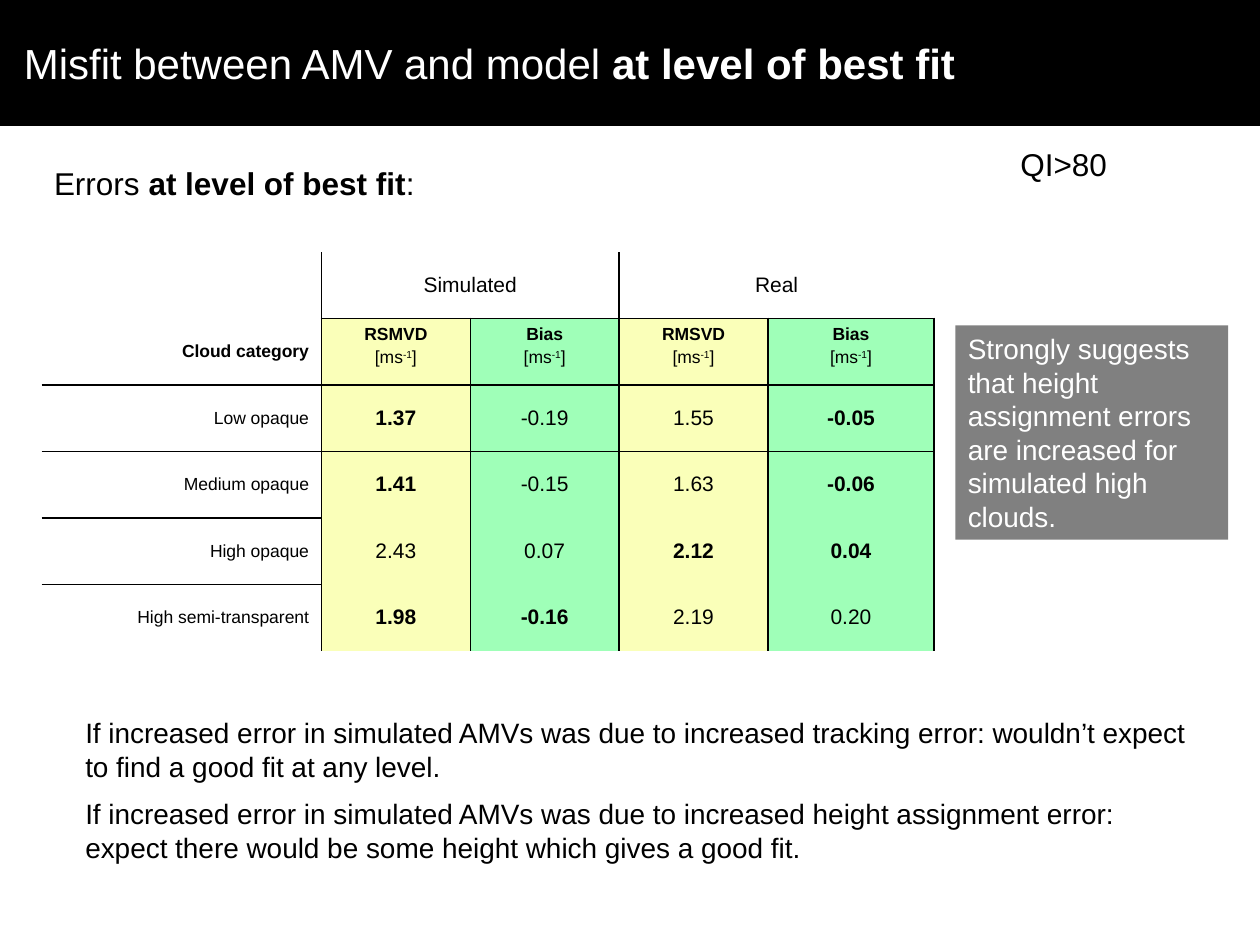
from lxml.etree import SubElement as Sub
from pptx import Presentation
from pptx.dml.color import RGBColor as Rgb
from pptx.enum.shapes import MSO_SHAPE as Shape
from pptx.enum.text import MSO_ANCHOR as Anchor, MSO_AUTO_SIZE as Fit, PP_ALIGN as Align
from pptx.oxml.ns import qn
from pptx.util import Cm, Pt

BLACK, WHITE, GREY = "000000", "FFFFFF", "808080"
YELLOW, GREEN = "FAFFB9", "9FFFB8"
PLAIN = "{2D5ABB26-0587-4C30-8999-92F81FD0307C}"


def paint(item, color):
    item.fill.solid()
    item.fill.fore_color.rgb = Rgb.from_string(color)


class Deck:
    font = "Arial"

    def __init__(self, wide, high):
        self.show = Presentation()
        self.show.slide_width, self.show.slide_height = Cm(wide), Cm(high)
        self.slide = self.show.slides.add_slide(self.show.slide_layouts[5])

    def put(self, frame, paras, size, color=BLACK, align=Align.LEFT, gap=0):
        frame.word_wrap = True
        for i, runs in enumerate(paras):
            para = frame.add_paragraph() if i else frame.paragraphs[0]
            para.alignment = align
            para.space_before = Pt(gap if i else 0)
            for text, *marks in runs:
                run = para.add_run()
                run.text = text
                run.font.name, run.font.size = self.font, Pt(size)
                run.font.bold = "bold" in marks
                run.font.color.rgb = Rgb.from_string(color)
                if "super" in marks:
                    run.font._element.set("baseline", "30000")

    def title(self, box, runs, size):
        head = self.slide.shapes.title
        head.left, head.top, head.width, head.height = map(Cm, box)
        paint(head, BLACK)
        frame = head.text_frame
        frame.auto_size = Fit.NONE
        frame.vertical_anchor = Anchor.MIDDLE
        frame.margin_left = Cm(0.48)
        self.put(frame, [runs], size, WHITE)

    def text(self, box, paras, size, gap=0):
        item = self.slide.shapes.add_textbox(*map(Cm, box))
        self.put(item.text_frame, paras, size, gap=gap)
        item.text_frame.auto_size = Fit.SHAPE_TO_FIT_TEXT

    def panel(self, box, paras, size, fill):
        item = self.slide.shapes.add_shape(Shape.RECTANGLE, *map(Cm, box))
        item.shadow.inherit = False
        paint(item, fill)
        item.line.fill.background()
        item.text_frame.vertical_anchor = Anchor.TOP
        self.put(item.text_frame, paras, size, WHITE)
        item.text_frame.auto_size = Fit.SHAPE_TO_FIT_TEXT

    def table(self, left, top, cols, rows, high):
        box = map(Cm, (left, top, sum(cols), high * rows))
        grid = self.slide.shapes.add_table(rows, len(cols), *box).table
        grid.first_row = grid.horz_banding = False
        grid._tbl.tblPr.find(qn("a:tableStyleId")).text = PLAIN
        for col, wide in zip(grid.columns, cols):
            col.width = Cm(wide)
        for row in grid.rows:
            row.height = Cm(high)
        return grid

    def edges(self, cell, sides):
        props = cell._tc.get_or_add_tcPr()
        for side in sides:
            line = Sub(props, qn(f"a:ln{side}"), w=str(Pt(1)))
            Sub(Sub(line, qn("a:solidFill")), qn("a:srgbClr"), val=BLACK)

    def cell(self, cell, paras, size, align, fill=None, anchor=Anchor.MIDDLE):
        if fill:
            paint(cell, fill)
        else:
            cell.fill.background()
        cell.vertical_anchor = anchor
        self.put(cell.text_frame, paras, size, align=align, gap=2)


def ruled(r, c):
    return r == 1 or (r == 0 and c > 0) or (c == 0 and 1 < r < 5)


def fill_table(deck):
    grid = deck.table(0.84, 5.08, (5.64, 3, 3, 3, 3.35), 6, 1.34)
    for r in range(6):
        for c in range(5):
            tests = {"L": c in (1, 3), "R": c in (0, 2, 4),
                     "T": ruled(r - 1, c), "B": ruled(r, c)}
            deck.edges(grid.cell(r, c), [k for k, on in tests.items() if on])
    for c, name in ((1, "Simulated"), (3, "Real")):
        grid.cell(0, c).merge(grid.cell(0, c + 1))
        deck.cell(grid.cell(0, c), [[(name,)]], 12, Align.CENTER)

    tints = (YELLOW, GREEN) * 2
    unit = [("[ms",), ("-1", "super"), ("]",)]
    deck.cell(grid.cell(1, 0), [[("Cloud category", "bold")]], 10, Align.RIGHT)
    names = ("RSMVD", "Bias", "RMSVD", "Bias")
    for c, (name, tint) in enumerate(zip(names, tints), 1):
        deck.cell(grid.cell(1, c), [[(name, "bold")], unit], 10,
                  Align.CENTER, tint, Anchor.TOP)

    data = (
        ("Low opaque", ("1.37", "-0.19", "1.55", "-0.05"), (1, 4)),
        ("Medium opaque", ("1.41", "-0.15", "1.63", "-0.06"), (1, 4)),
        ("High opaque", ("2.43", "0.07", "2.12", "0.04"), (3, 4)),
        ("High semi-transparent", ("1.98", "-0.16", "2.19", "0.20"), (1, 2)),
    )
    for r, (name, values, best) in enumerate(data, 2):
        deck.cell(grid.cell(r, 0), [[(name,)]], 10, Align.RIGHT)
        for c, (value, tint) in enumerate(zip(values, tints), 1):
            run = (value, "bold") if c in best else (value,)
            deck.cell(grid.cell(r, c), [[run]], 12, Align.CENTER, tint)


def main():
    deck = Deck(25.4, 19.05)
    best = ("at level of best fit", "bold")
    deck.title((0, 0, 25.4, 2.54), [("Misfit between AMV and model ",), best], 24)
    fill_table(deck)
    deck.text((0.84, 3.18, 20.52, 1.02), [[("Errors ",), best, (":",)]], 18)
    start = "If increased error in simulated AMVs was due to increased "
    ends = ("tracking error: wouldn’t expect to find a good fit at any level.",
            "height assignment error: expect there would be some height "
            "which gives a good fit.")
    deck.text((1.47, 14.3, 23.06, 3.4), [[(start + end,)] for end in ends], 16, 8)
    deck.panel((19.26, 6.56, 5.5, 4.32),
               [[("Strongly suggests that height assignment errors "
                  "are increased for simulated high clouds.",)]], 16, GREY)
    deck.text((20.32, 2.8, 4.88, 1.02), [[("QI>80",)]], 18)
    deck.show.save("out.pptx")


if __name__ == "__main__":
    main()
